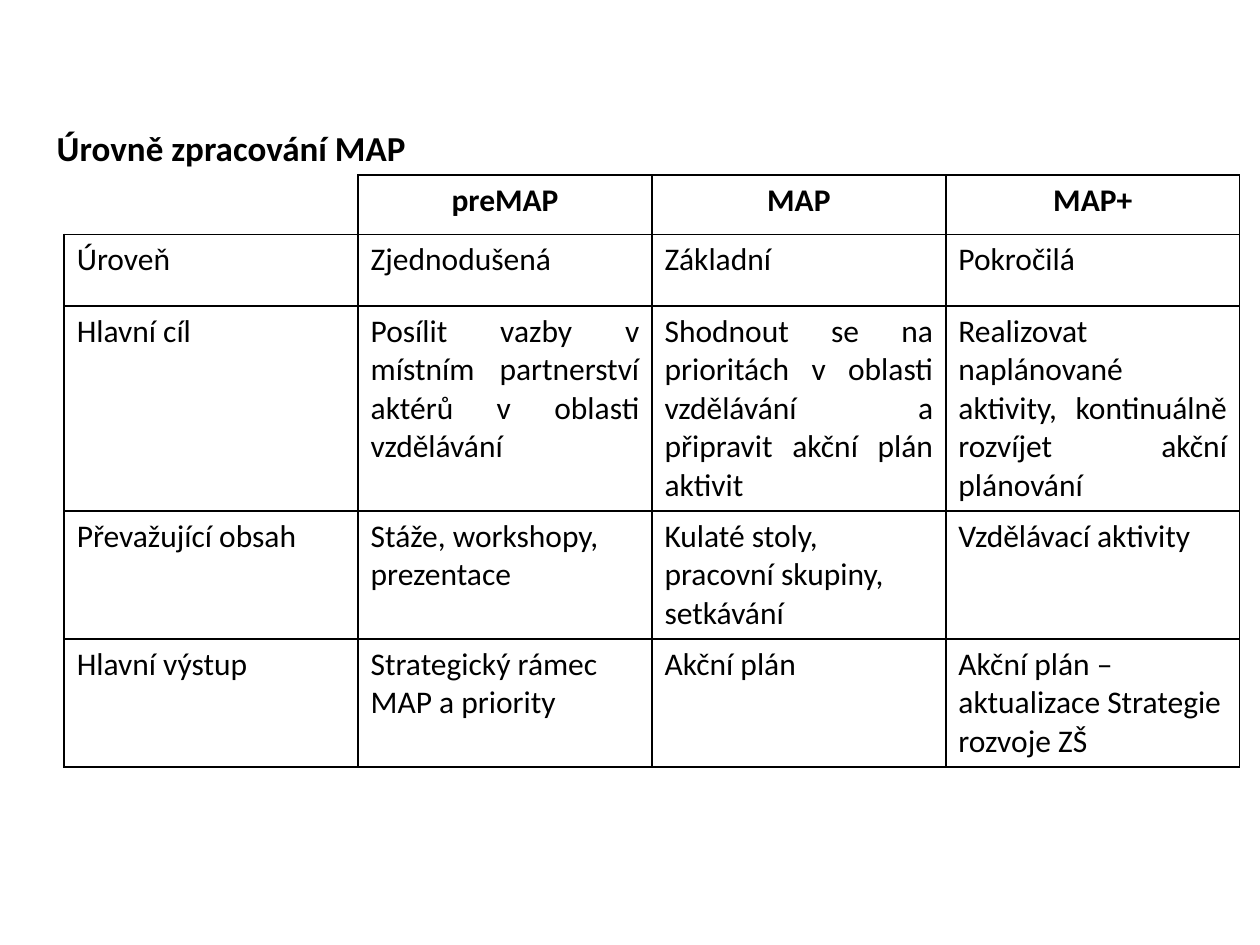
from dataclasses import dataclass

from lxml import etree
from pptx import Presentation
from pptx import util as u
from pptx.dml.color import RGBColor
from pptx.enum import text
from pptx.oxml import ns


@dataclass(frozen=True)
class Theme:
    ink: str = "000000"
    font: str = "Calibri"
    title_size: int = 20
    cell_size: int = 18
    border_width: int = 1


@dataclass(frozen=True)
class Row:
    height: float
    label: str
    values: tuple[str, str, str]
    align: text.PP_ALIGN = text.PP_ALIGN.LEFT
    bold: bool = False


THEME = Theme()
TABLE_LEFT, TABLE_TOP, TABLE_WIDTH = 0.51, 1.39, 9.33
ROWS = (
    Row(0.47, "", ("preMAP", "MAP", "MAP+"), text.PP_ALIGN.CENTER, True),
    Row(0.57, "Úroveň", ("Zjednodušená", "Základní", "Pokročilá")),
    Row(1.6, "Hlavní cíl", (
        "Posílit vazby v místním partnerství aktérů v oblasti vzdělávání",
        "Shodnout se na prioritách v oblasti vzdělávání a připravit akční plán aktivit",
        "Realizovat naplánované aktivity, kontinuálně rozvíjet akční plánování",
    ), text.PP_ALIGN.JUSTIFY),
    Row(1, "Převažující obsah", (
        "Stáže, workshopy, prezentace",
        "Kulaté stoly, pracovní skupiny, setkávání",
        "Vzdělávací aktivity",
    )),
    Row(1, "Hlavní výstup", (
        "Strategický rámec MAP a priority",
        "Akční plán",
        "Akční plán – aktualizace Strategie rozvoje ZŠ",
    )),
)


def write(frame, words: str, size: int, bold: bool, align: text.PP_ALIGN) -> None:
    para = frame.paragraphs[0]
    para.alignment = align
    span = para.add_run()
    span.text = words
    span.font.name = THEME.font
    span.font.size = u.Pt(size)
    span.font.bold = bold
    span.font.color.rgb = RGBColor.from_string(THEME.ink)


def set_borders(cell, visible: str) -> None:
    properties = cell._tc.get_or_add_tcPr()
    for side in "LRTB":
        line = etree.SubElement(properties, ns.qn(f"a:ln{side}"))
        if side in visible:
            line.set("w", str(u.Pt(THEME.border_width)))
            fill = etree.SubElement(line, ns.qn("a:solidFill"))
            etree.SubElement(fill, ns.qn("a:srgbClr"), val=THEME.ink)
        else:
            line.set("w", "0")
            etree.SubElement(line, ns.qn("a:noFill"))


def add_title(page, words: str) -> None:
    box = page.shapes.title
    box.left, box.top = u.Inches(0.35), u.Inches(0.95)
    box.width, box.height = u.Inches(9.29), u.Inches(0.44)
    frame = box.text_frame
    frame.word_wrap = True
    frame.auto_size = text.MSO_AUTO_SIZE.NONE
    frame.vertical_anchor = text.MSO_ANCHOR.TOP
    write(frame, words, THEME.title_size, True, text.PP_ALIGN.LEFT)


def add_levels_table(page, rows: tuple[Row, ...]) -> None:
    column_count = 1 + len(rows[0].values)
    table = page.shapes.add_table(
        len(rows), column_count, u.Inches(TABLE_LEFT), u.Inches(TABLE_TOP),
        u.Inches(TABLE_WIDTH), u.Inches(sum(row.height for row in rows)),
    ).table
    table.first_row = table.horz_banding = False
    for column in table.columns:
        column.width = u.Inches(TABLE_WIDTH / column_count)
    for row_index, row in enumerate(rows):
        table.rows[row_index].height = u.Inches(row.height)
        for column_index, words in enumerate((row.label, *row.values)):
            cell = table.cell(row_index, column_index)
            set_borders(cell, "LRTB" if words else "RB")
            cell.fill.background()
            if words:
                align = row.align if column_index else text.PP_ALIGN.LEFT
                write(cell.text_frame, words, THEME.cell_size, row.bold, align)


def main() -> None:
    deck = Presentation()
    deck.slide_width, deck.slide_height = u.Inches(10), u.Inches(7.5)
    page = deck.slides.add_slide(deck.slide_layouts.get_by_name("Title Only"))
    add_title(page, "Úrovně zpracování MAP")
    add_levels_table(page, ROWS)
    deck.save("out.pptx")


if __name__ == "__main__":
    main()
